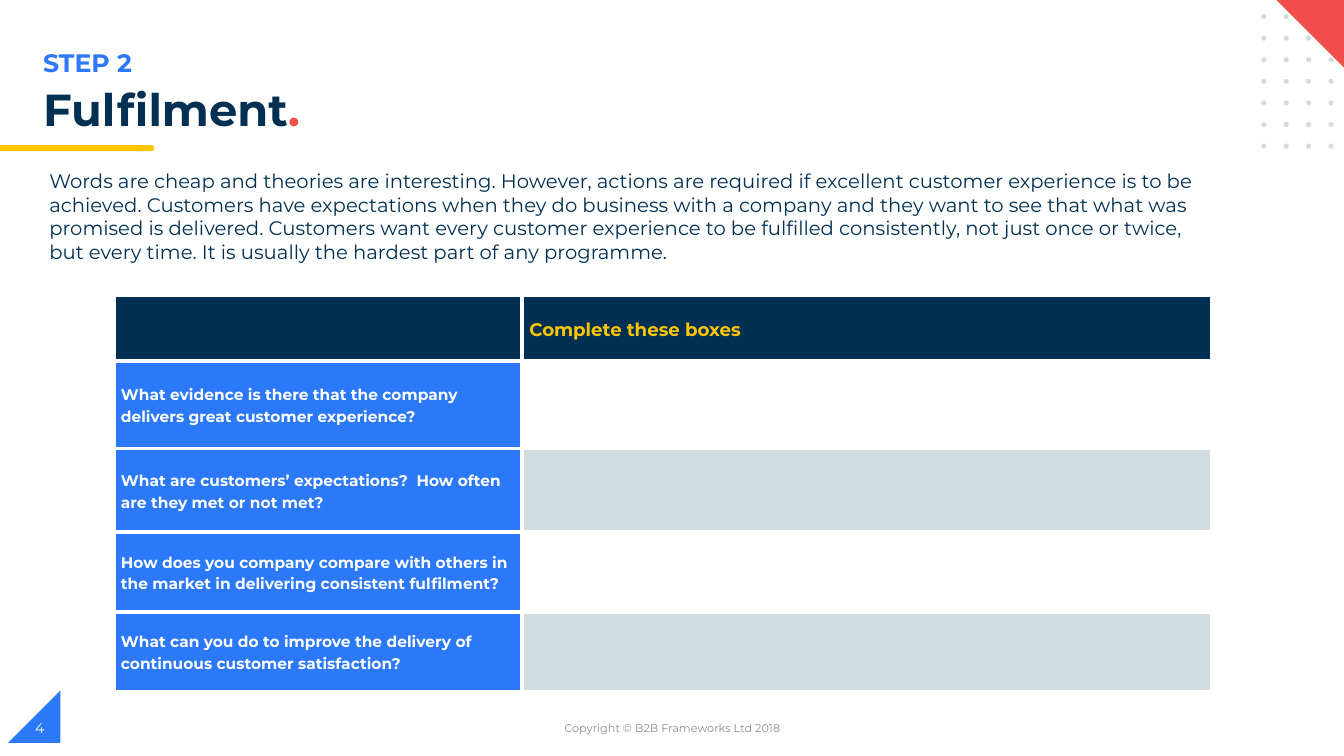
from lxml import etree
from pptx import Presentation
from pptx.dml.color import RGBColor
from pptx.enum import shapes, text
from pptx.oxml import ns
from pptx.util import Inches, Pt

NAVY = RGBColor(0x02, 0x30, 0x53)
BLUE = RGBColor(0x2B, 0x79, 0xF8)
YELLOW = RGBColor(0xFF, 0xC6, 0x00)
RED = RGBColor(0xF2, 0x4E, 0x4E)
PALE = RGBColor(0xD1, 0xDB, 0xE0)
GREY = RGBColor(0x88, 0x8C, 0x97)
WHITE = RGBColor(0xFF, 0xFF, 0xFF)

FONT = "Montserrat"
SHAPE = shapes.MSO_SHAPE
MIDDLE = text.MSO_ANCHOR.MIDDLE

INTRO = (
    "Words are cheap and theories are interesting. However, actions are required "
    "if excellent customer experience is to be achieved. Customers have expectations "
    "when they do business with a company and they want to see that what was promised "
    "is delivered. Customers want every customer experience to be fulfilled "
    "consistently, not just once or twice, but every time. It is usually the hardest "
    "part of any programme."
)
QUESTIONS = [
    "What evidence is there that the company delivers great customer experience?",
    "What are customers’ expectations?  How often are they met or not met?",
    "How does you company compare with others in the market in delivering "
    "consistent fulfilment?",
    "What can you do to improve the delivery of continuous customer satisfaction?",
]
COLUMN_WIDTHS = [4.05, 6.84]
ROW_HEIGHTS = [0.65, 0.87, 0.83, 0.79, 0.79]


def add_span(para, words, size, color, bold=False):
    span = para.add_run()
    span.text = words
    span.font.name = FONT
    span.font.size = Pt(size)
    span.font.bold = bold
    span.font.color.rgb = color


def add_text(page, words, left, top, width, height, size, color, bold=False,
             align=None, anchor=text.MSO_ANCHOR.TOP, spacing=None):
    box = page.shapes.add_textbox(
        Inches(left), Inches(top), Inches(width), Inches(height))
    box.text_frame.word_wrap = True
    box.text_frame.vertical_anchor = anchor
    para = box.text_frame.paragraphs[0]
    para.alignment = align
    para.line_spacing = spacing
    add_span(para, words, size, color, bold)
    return para


def add_block(page, kind, left, top, width, height, color):
    block = page.shapes.add_shape(
        kind, Inches(left), Inches(top), Inches(width), Inches(height))
    block.shadow.inherit = False
    block.fill.solid()
    block.fill.fore_color.rgb = color
    block.line.fill.background()
    return block


def add_decoration(page):
    corner = add_block(page, SHAPE.RIGHT_TRIANGLE, 0.08, 6.85, 0.52, 0.52, BLUE)
    corner.element.spPr.xfrm.set("flipH", "1")
    add_block(page, SHAPE.FLOWCHART_TERMINATOR, 1.34, 1.44, 0.19, 0.06, YELLOW)
    add_block(page, SHAPE.RECTANGLE, 0, 1.44, 1.41, 0.06, YELLOW)
    for row in range(7):
        for column in range(4):
            add_block(page, SHAPE.OVAL, 12.51 + 0.222 * column,
                      0.14 + 0.214 * row, 0.05, 0.05, PALE)
    top_corner = add_block(page, SHAPE.RIGHT_TRIANGLE, 12.65, -0.01, 0.72, 0.72, RED)
    top_corner.rotation = 180


def add_borders(cell):
    properties = cell._tc.get_or_add_tcPr()
    for index, side in enumerate(("a:lnL", "a:lnR", "a:lnT", "a:lnB")):
        line = etree.Element(ns.qn(side), w=str(Pt(3)))
        fill = etree.SubElement(line, ns.qn("a:solidFill"))
        etree.SubElement(fill, ns.qn("a:srgbClr"), val=str(WHITE))
        properties.insert(index, line)


def format_cell(cell, fill, words="", size=11, color=WHITE):
    cell.fill.solid()
    cell.fill.fore_color.rgb = fill
    cell.margin_left = cell.margin_right = Inches(0.07)
    cell.margin_top = cell.margin_bottom = 0
    cell.vertical_anchor = MIDDLE
    add_borders(cell)
    if words:
        para = cell.text_frame.paragraphs[0]
        para.line_spacing = 1.15
        add_span(para, words, size, color, bold=True)


def add_question_table(page):
    table = page.shapes.add_table(
        len(ROW_HEIGHTS), len(COLUMN_WIDTHS), Inches(1.13), Inches(2.93),
        Inches(sum(COLUMN_WIDTHS)), Inches(sum(ROW_HEIGHTS))).table
    for column, width in zip(table.columns, COLUMN_WIDTHS):
        column.width = Inches(width)
    for row, height in zip(table.rows, ROW_HEIGHTS):
        row.height = Inches(height)
    format_cell(table.cell(0, 0), NAVY)
    format_cell(table.cell(0, 1), NAVY, "Complete these boxes", 13, YELLOW)
    for index, question in enumerate(QUESTIONS, start=1):
        format_cell(table.cell(index, 0), BLUE, question)
        format_cell(table.cell(index, 1), WHITE if index % 2 else PALE)


def main():
    deck = Presentation()
    deck.slide_width = Inches(13.33)
    deck.slide_height = Inches(7.5)
    page = deck.slides.add_slide(deck.slide_layouts[6])

    add_decoration(page)
    add_text(page, "STEP 2", 0.33, 0.42, 6.69, 0.4, 18, BLUE, bold=True)
    add_text(page, "Copyright © B2B Frameworks Ltd 2018", 4.42, 7.02, 4.5, 0.4, 8,
             GREY, align=text.PP_ALIGN.CENTER, anchor=MIDDLE)
    add_text(page, "4", 0.25, 7.02, 3, 0.4, 10, WHITE, anchor=MIDDLE)
    title = add_text(page, "Fulfilment", 0.33, 0.82, 11.15, 0.56, 32, NAVY,
                     bold=True, spacing=0.9)
    add_span(title, ".", 32, RED, bold=True)
    add_question_table(page)
    add_text(page, INTRO, 0.39, 1.63, 11.72, 1.04, 14, NAVY)

    deck.save("out.pptx")


if __name__ == "__main__":
    main()
